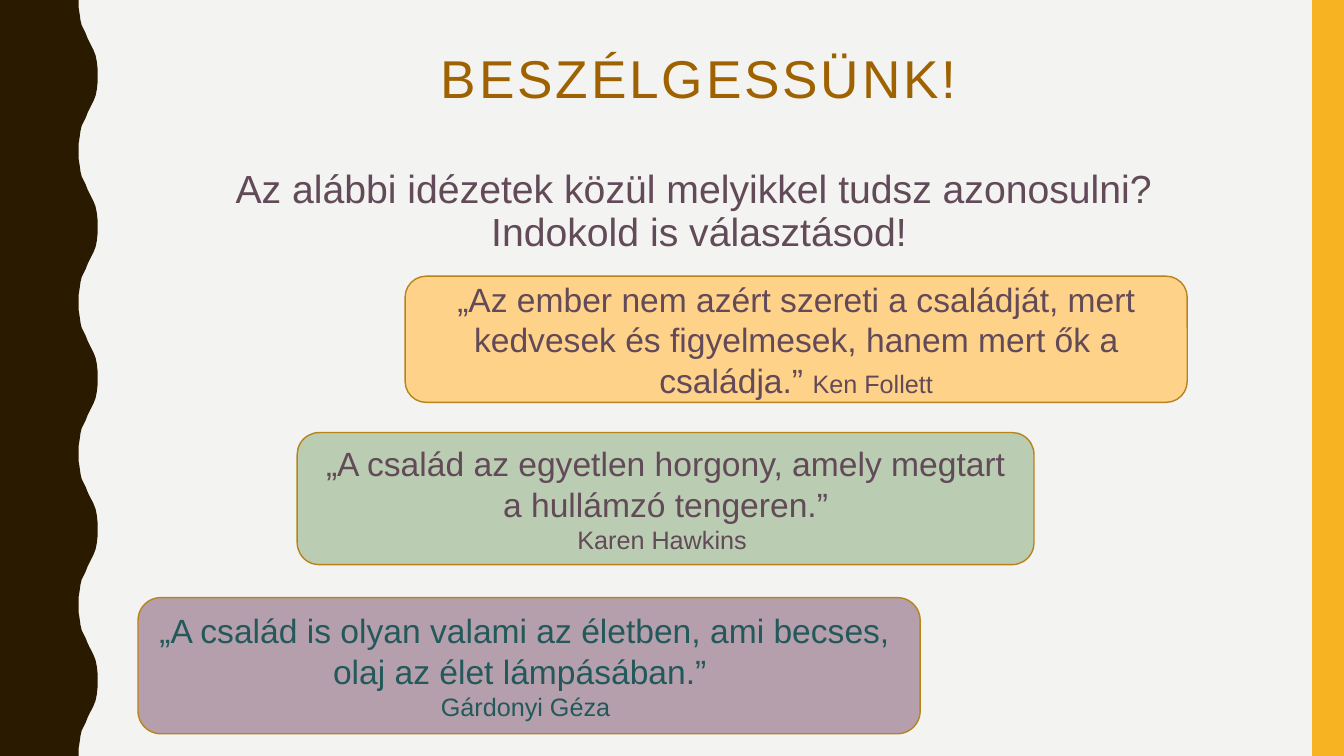
from pptx import Presentation
from pptx.dml.color import RGBColor
from pptx.enum.shapes import MSO_SHAPE
from pptx.enum.text import MSO_ANCHOR, PP_ALIGN
from pptx.util import Cm, Pt

PAPER = RGBColor(0xF3, 0xF3, 0xF2)
BROWN = RGBColor(0x2A, 0x1A, 0x00)
GOLD = RGBColor(0xF8, 0xB3, 0x23)
OUTLINE = RGBColor(0xB7, 0x84, 0x1A)
TITLE = RGBColor(0x9F, 0x62, 0x00)
PLUM = RGBColor(0x62, 0x4A, 0x58)
TEAL = RGBColor(0x23, 0x59, 0x5A)
ORANGE = RGBColor(0xFF, 0xD2, 0x8A)
GREEN = RGBColor(0xBA, 0xCC, 0xB2)
MAUVE = RGBColor(0xB6, 0x9F, 0xAD)

WIDTH, HEIGHT = 33.87, 19.05
WAVE_PERIOD = HEIGHT / 5
HALF_WAVE = [
    (1.98, 0), (1.98, 0.18), (2.01, 0.36), (2.03, 0.51), (2.06, 0.64),
    (2.11, 0.74), (2.16, 0.84), (2.21, 0.97), (2.26, 1.07), (2.31, 1.17),
    (2.36, 1.27), (2.41, 1.4), (2.44, 1.55), (2.46, 1.73), (2.46, 1.9),
]

HEADING = "BESZÉLGESSÜNK!"
QUESTION = [
    "Az alábbi idézetek közül melyikkel tudsz azonosulni? ",
    "Indokold is választásod!",
]
QUOTES = [
    ((10.21, 6.96, 19.71, 3.18), ORANGE, PLUM, [
        [("„Az ember nem azért szereti a családját, mert kedvesek és "
          "figyelmesek, hanem mert ők a családja.” ", 24),
         ("Ken Follett", 18)],
    ]),
    ((7.49, 10.9, 18.57, 3.33), GREEN, PLUM, [
        [("„A család az egyetlen horgony, amely megtart a hullámzó tengeren.”", 24)],
        [("Karen Hawkins ", 18)],
    ]),
    ((3.48, 15.06, 19.71, 3.43), MAUVE, TEAL, [
        [("„A család is olyan valami az életben, ami becses, ", 24)],
        [("olaj az élet lámpásában.”  ", 24)],
        [("Gárdonyi Géza ", 18)],
    ]),
]


def add_text(para, text, size, color, spacing=0):
    para.alignment = PP_ALIGN.CENTER
    span = para.add_run()
    span.text = text
    span.font.name = "Arial"
    span.font.size = Pt(size)
    span.font.color.rgb = color
    if spacing:
        span._r.get_or_add_rPr().set("spc", str(spacing * 100))


def paint(shape, fill, line=None):
    shape.shadow.inherit = False
    shape.fill.solid()
    shape.fill.fore_color.rgb = fill
    if line is None:
        shape.line.fill.background()
    else:
        shape.line.color.rgb = line
        shape.line.width = Pt(1)


def next_para(frame, index):
    return frame.add_paragraph() if index else frame.paragraphs[0]


deck = Presentation()
deck.slide_width, deck.slide_height = Cm(WIDTH), Cm(HEIGHT)
page = deck.slides.add_slide(deck.slide_layouts[6])
page.background.fill.solid()
page.background.fill.fore_color.rgb = PAPER

full_wave = HALF_WAVE + [(x, WAVE_PERIOD - y) for x, y in reversed(HALF_WAVE)]
edge = [(x, y + turn * WAVE_PERIOD) for turn in range(5) for x, y in full_wave]
builder = page.shapes.build_freeform(0, 0)
builder.add_line_segments([(Cm(x), Cm(y)) for x, y in edge + [(0, HEIGHT)]], close=True)
paint(builder.convert_to_shape(), BROWN)

stripe = page.shapes.add_shape(MSO_SHAPE.RECTANGLE, Cm(33.07), 0, Cm(0.8), Cm(HEIGHT))
paint(stripe, GOLD)

title_box = page.shapes.add_textbox(Cm(3.48), Cm(1.07), Cm(28.27), Cm(5.46))
title_frame = title_box.text_frame
title_frame.word_wrap = True
title_frame.margin_top = Cm(0.25)
title_lines = [(HEADING, 38, TITLE, 2)] + [(line, 28, PLUM, 0) for line in QUESTION]
for index, (text, size, color, spacing) in enumerate(title_lines):
    para = next_para(title_frame, index)
    para.line_spacing = 0.9
    para.space_before = Pt(43 if index == 1 else 0)
    add_text(para, text, size, color, spacing=spacing)

for place, fill, color, lines in QUOTES:
    box = page.shapes.add_shape(MSO_SHAPE.ROUNDED_RECTANGLE, *map(Cm, place))
    paint(box, fill, line=OUTLINE)
    frame = box.text_frame
    frame.word_wrap = True
    frame.vertical_anchor = MSO_ANCHOR.MIDDLE
    for index, spans in enumerate(lines):
        para = next_para(frame, index)
        for text, size in spans:
            add_text(para, text, size, color)

deck.save("out.pptx")
